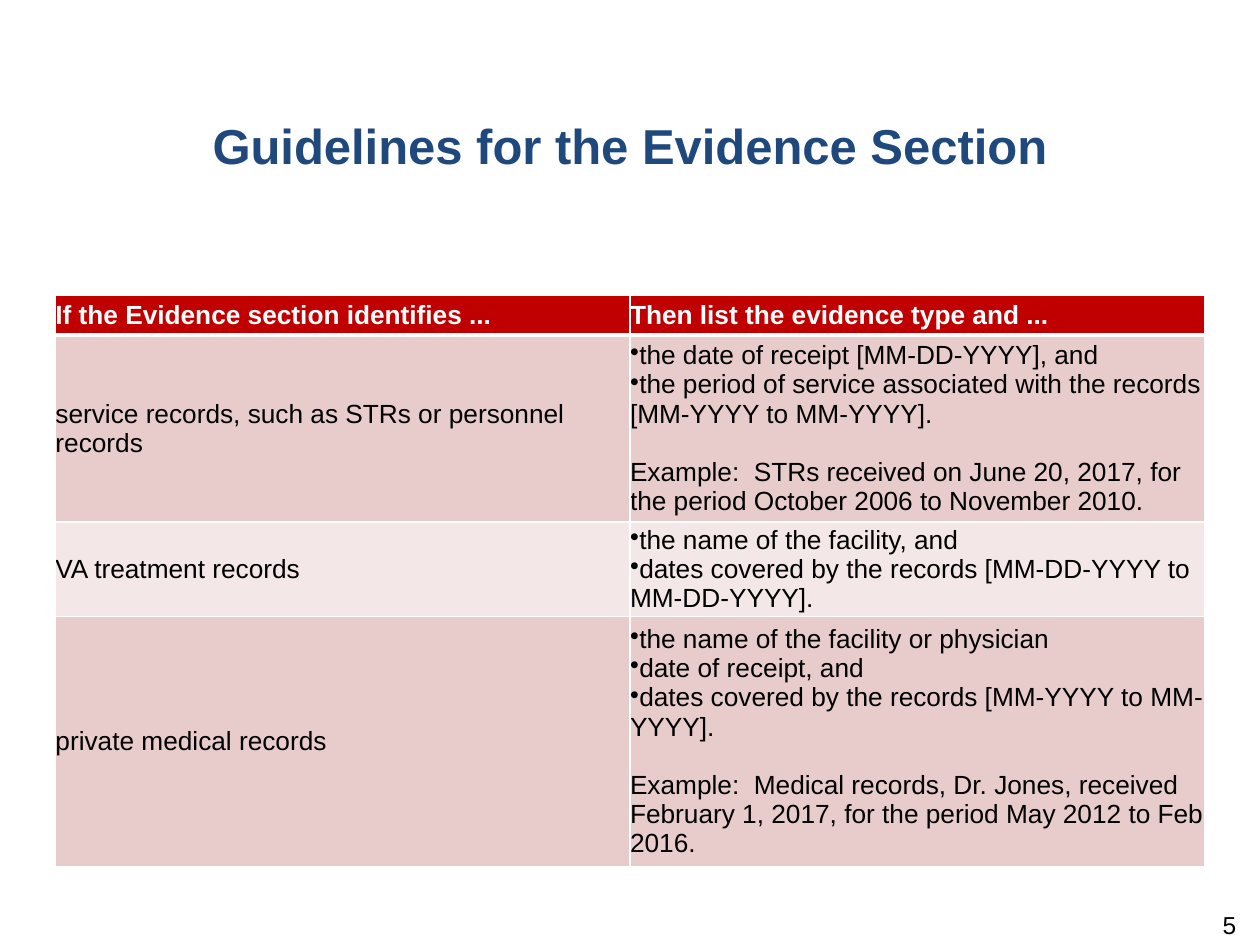
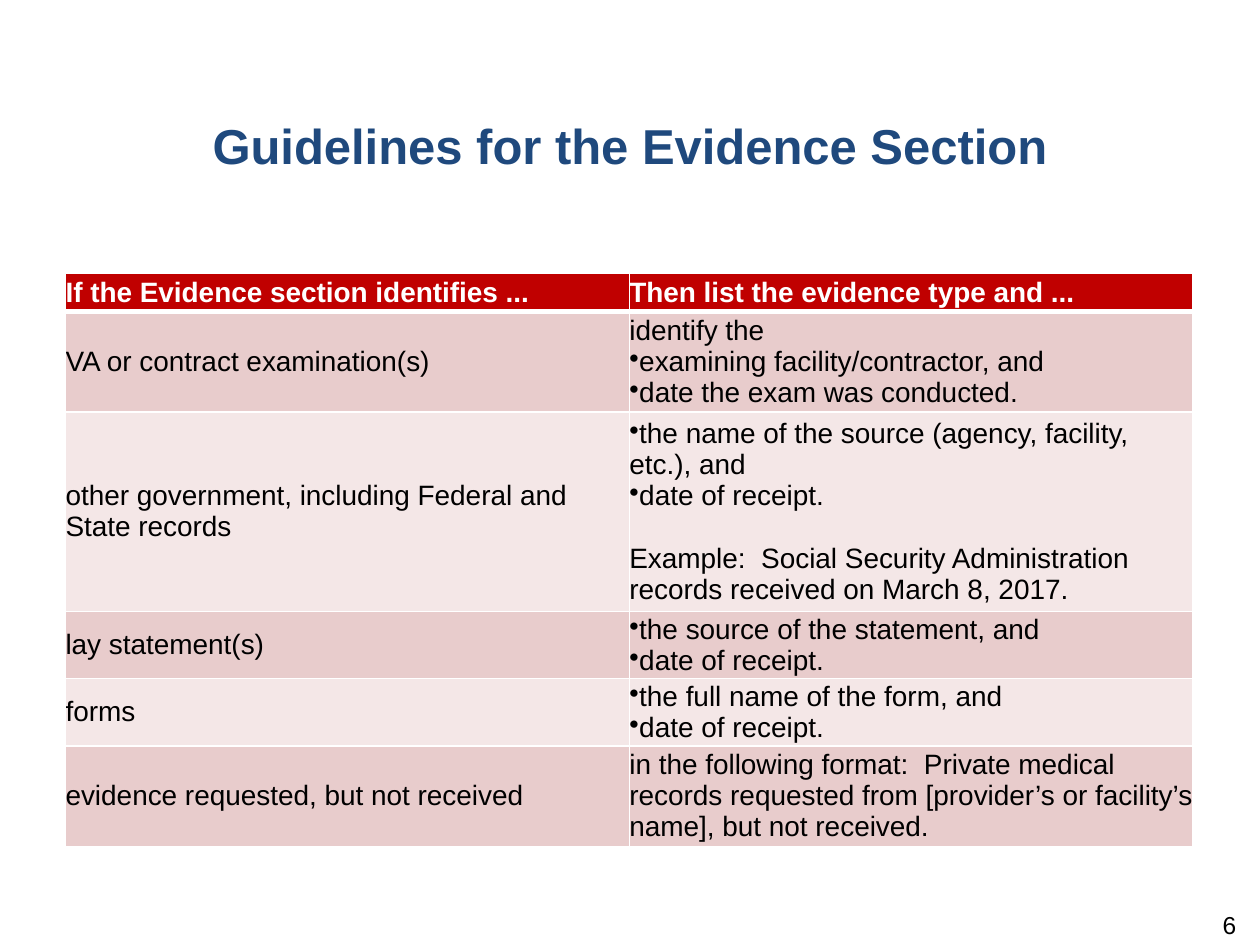
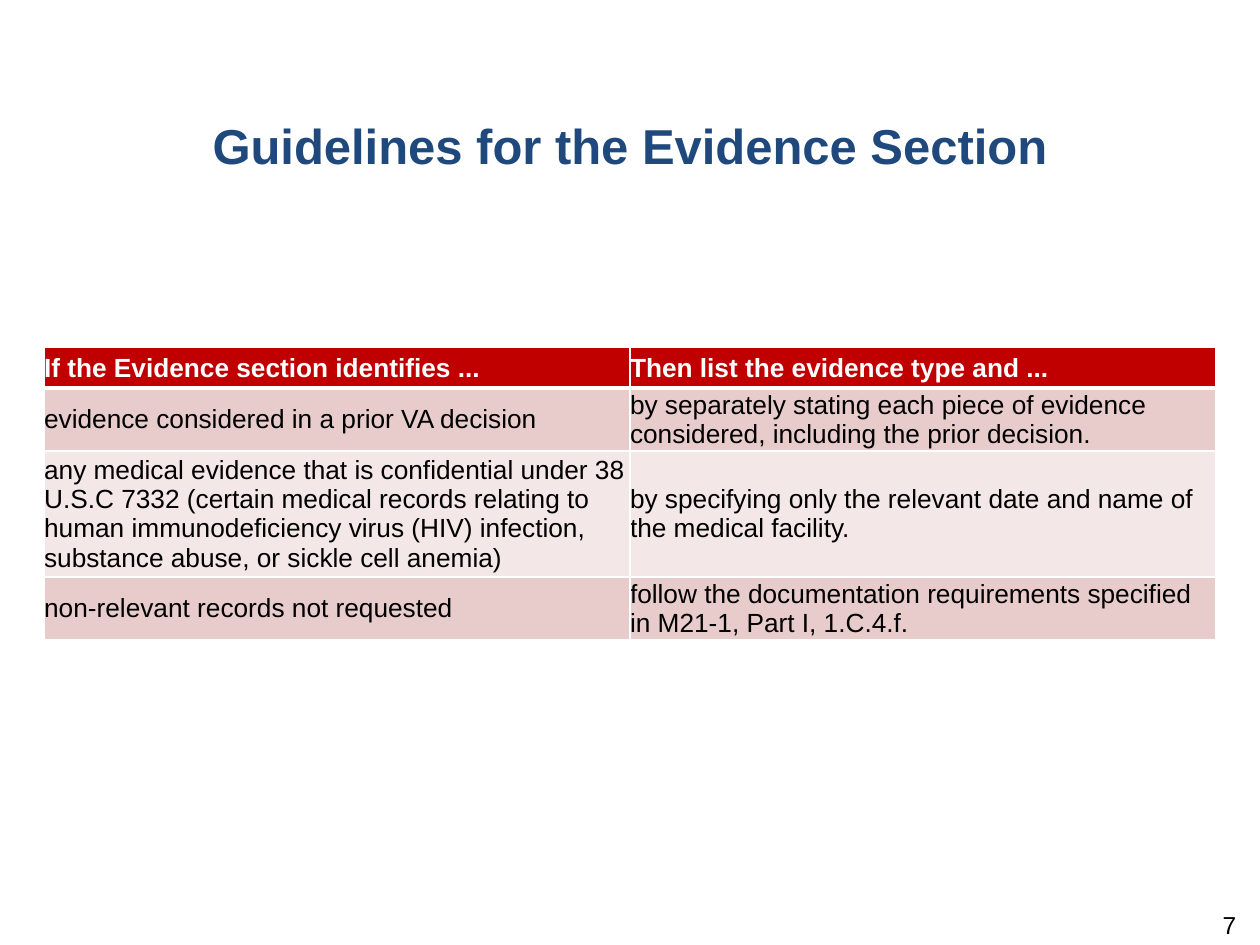
from lxml import etree
from pptx import Presentation
from pptx.dml.color import RGBColor
from pptx.enum.text import MSO_ANCHOR as ANCHOR, PP_ALIGN as ALIGN
from pptx.oxml.ns import qn
from pptx.util import Inches, Pt

FONT = "Arial"
BLACK, WHITE = "000000", "FFFFFF"
TITLE_BLUE, HEADER_RED = "1F497D", "C00000"
BANDS = ("E8CCCC", "F4E7E7")
LINE_HEIGHT = 1.12
TITLE = "Guidelines for the Evidence Section"
TITLE_BOX = (0, 0.87, 10, 1.19)
NUMBER_BOX = (7.58, 7.22, 2.33, 0.4)
HEADER = ("If the Evidence section identifies ...", ["Then list the evidence type and ..."])

SLIDES = [
    dict(
        number=5, box=(0.44, 2.34, 9.12), size=15, heights=(0.32, 1.4, 0.7, 1.87),
        rows=[
            ("service records, such as STRs or personnel records", [
                "•the date of receipt [MM-DD-YYYY], and",
                "•the period of service associated with the records [MM-YYYY to MM-YYYY].",
                "Example:  STRs received on June 20, 2017, for the period October 2006 to November 2010.",
            ]),
            ("VA treatment records", [
                "•the name of the facility, and",
                "•dates covered by the records [MM-DD-YYYY to MM-DD-YYYY].",
            ]),
            ("private medical records", [
                "•the name of the facility or physician",
                "•date of receipt, and",
                "•dates covered by the records [MM-YYYY to MM-YYYY].",
                "Example:  Medical records, Dr. Jones, received February 1, 2017, "
                "for the period May 2012 to Feb 2016.",
            ]),
        ],
    ),
    dict(
        number=6, box=(0.52, 2.17, 8.95), size=16, heights=(0.3, 0.76, 1.51, 0.5, 0.5, 0.76),
        rows=[
            ("VA or contract examination(s)", [
                "identify the",
                "•examining facility/contractor, and",
                "•date the exam was conducted.",
            ]),
            ("other government, including Federal and State records", [
                "•the name of the source (agency, facility, etc.), and",
                "•date of receipt.",
                "Example:  Social Security Administration records received on March 8, 2017.",
            ]),
            ("lay statement(s)", ["•the source of the statement, and", "•date of receipt."]),
            ("forms", ["•the full name of the form, and", "•date of receipt."]),
            ("evidence requested, but not received", [
                "in the following format:  Private medical records requested from "
                "[provider’s or facility’s name], but not received.",
            ]),
        ],
    ),
    dict(
        number=7, box=(0.35, 2.76, 9.3), size=15, heights=(0.32, 0.49, 0.97, 0.49),
        rows=[
            ("evidence considered in a prior VA decision", [
                "by separately stating each piece of evidence considered, "
                "including the prior decision.",
            ]),
            ("any medical evidence that is confidential under 38 U.S.C 7332 (certain medical "
             "records relating to human immunodeficiency virus (HIV) infection, substance abuse, "
             "or sickle cell anemia)", [
                "by specifying only the relevant date and name of the medical facility.",
            ]),
            ("non-relevant records not requested", [
                "follow the documentation requirements specified in M21-1, Part I, 1.C.4.f.",
            ]),
        ],
    ),
]


def rgb(value):
    return RGBColor.from_string(value)


def add_run(p, text, size, color, bold=False):
    r = p.add_run()
    r.text = text
    r.font.name = FONT
    r.font.size = Pt(size)
    r.font.bold = bold
    r.font.color.rgb = rgb(color)


def add_line(s, box, text, size, color, align, bold=False, top=0.05):
    tf = s.shapes.add_textbox(*map(Inches, box)).text_frame
    tf.word_wrap = True
    tf.vertical_anchor = ANCHOR.TOP
    tf.margin_top = Inches(top)
    p = tf.paragraphs[0]
    p.alignment = align
    add_run(p, text, size, color, bold)


def add_bullet(p):
    pPr = p._p.get_or_add_pPr()
    pPr.set("marL", "0")
    pPr.set("indent", "0")
    etree.SubElement(pPr, qn("a:buChar")).set("char", "•")


def set_borders(cell, widths):
    tcPr = cell._tc.get_or_add_tcPr()
    for i, (side, width) in enumerate(zip("LRTB", widths)):
        ln = etree.Element(qn(f"a:ln{side}"), w=str(Pt(width)))
        fill = etree.SubElement(ln, qn("a:solidFill"))
        etree.SubElement(fill, qn("a:srgbClr")).set("val", WHITE)
        tcPr.insert(i, ln)


def fill_cell(cell, lines, size, row):
    header = row == 0
    cell.margin_left = cell.margin_right = cell.margin_top = cell.margin_bottom = 0
    cell.vertical_anchor = ANCHOR.MIDDLE
    cell.fill.solid()
    cell.fill.fore_color.rgb = rgb(HEADER_RED if header else BANDS[(row - 1) % 2])
    set_borders(cell, (1, 1, 3 if row == 1 else 1, 3 if header else 1))
    tf = cell.text_frame
    after_bullet = False
    for i, text in enumerate(lines):
        p = tf.add_paragraph() if i else tf.paragraphs[0]
        bullet = text.startswith("•")
        if bullet:
            add_bullet(p)
        elif after_bullet:
            p.space_before = Pt(size * LINE_HEIGHT)
        add_run(p, text.removeprefix("•"), size, WHITE if header else BLACK, header)
        after_bullet = bullet


def add_evidence_table(s, box, size, heights, rows):
    left, top, width = box
    table = s.shapes.add_table(
        len(heights), 2, Inches(left), Inches(top), Inches(width), Inches(sum(heights))
    ).table
    table.horz_banding = False
    for column in table.columns:
        column.width = Inches(width / 2)
    for i, (height, (evidence, details)) in enumerate(zip(heights, [HEADER, *rows])):
        table.rows[i].height = Inches(height)
        fill_cell(table.cell(i, 0), [evidence], size, i)
        fill_cell(table.cell(i, 1), details, size, i)


def add_guideline_slide(prs, number, **table):
    s = prs.slides.add_slide(prs.slide_layouts[6])
    add_line(s, TITLE_BOX, TITLE, 28, TITLE_BLUE, ALIGN.CENTER, bold=True)
    add_line(s, NUMBER_BOX, str(number), 14, BLACK, ALIGN.RIGHT, top=0)
    add_evidence_table(s, **table)


def main():
    prs = Presentation()
    prs.slide_width, prs.slide_height = Inches(10), Inches(7.5)
    for content in SLIDES:
        add_guideline_slide(prs, **content)
    prs.save("out.pptx")


if __name__ == "__main__":
    main()
